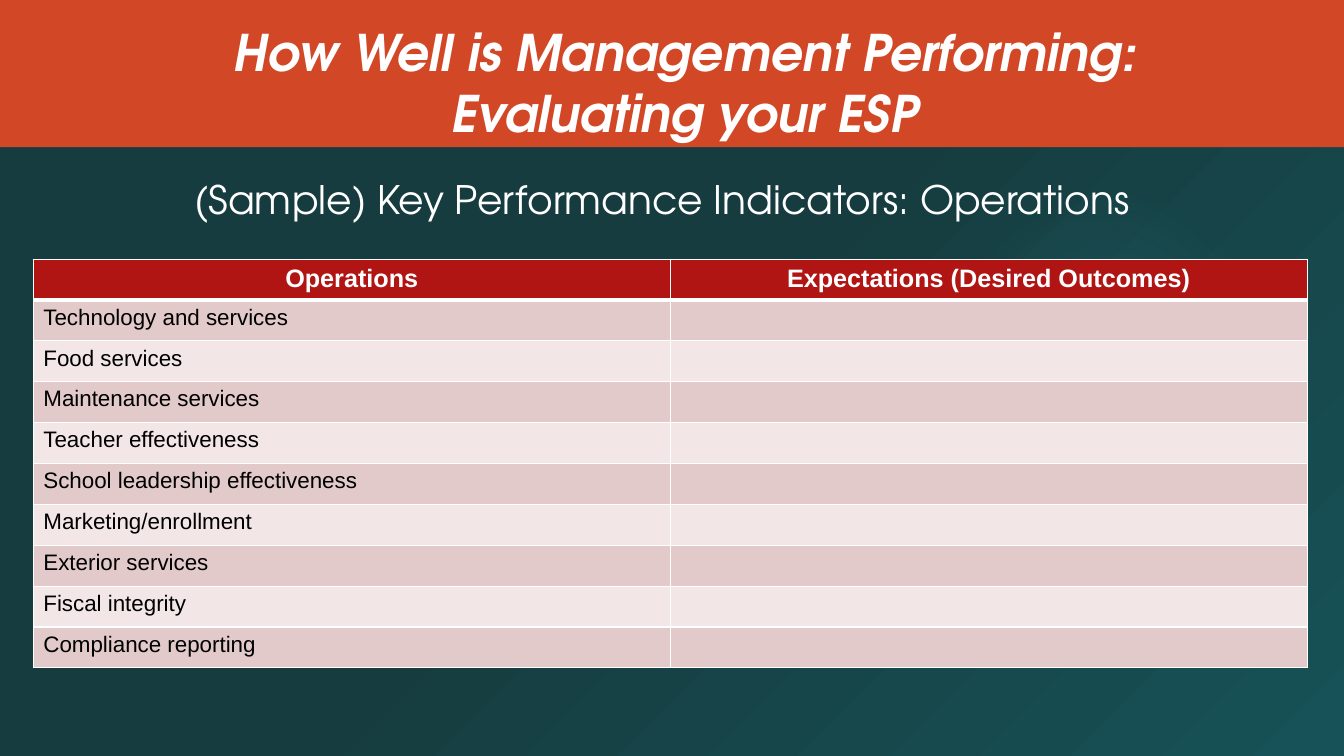
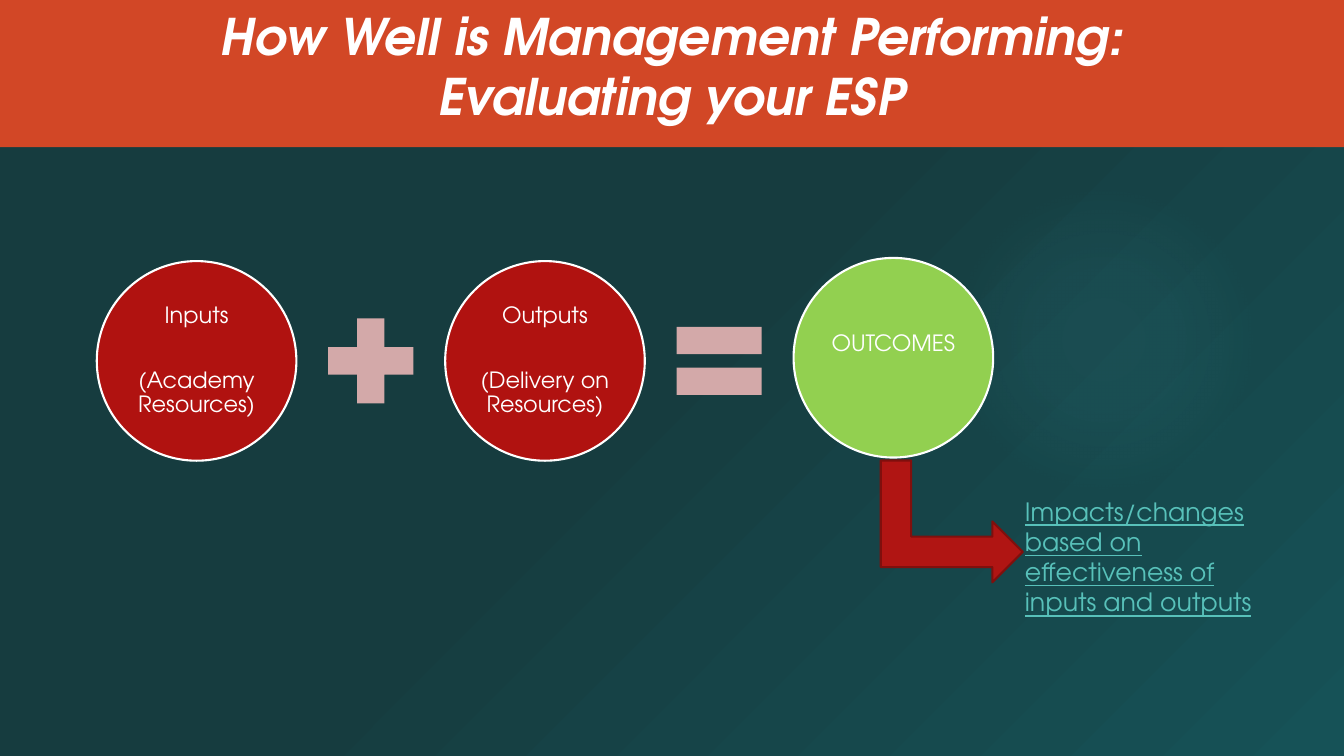
import dataclasses

import lxml.etree
import pptx
import pptx.dml.color
import pptx.enum.shapes
import pptx.enum.text
import pptx.oxml
import pptx.oxml.ns
import pptx.util

Cm = pptx.util.Cm
Pt = pptx.util.Pt
SHAPE = pptx.enum.shapes.MSO_SHAPE
ALIGN = pptx.enum.text.PP_ALIGN
qn = pptx.oxml.ns.qn


@dataclasses.dataclass(frozen=True)
class Theme:
    wide: float = 33.87
    high: float = 19.05
    font: str = "TeX Gyre Adventor"
    grid_font: str = "Arial"
    white: str = "FFFFFF"
    black: str = "000000"
    dark: str = "163C3F"
    teal: str = "165257"
    glow: str = "4CB9C3"
    band: str = "D24726"
    red: str = "B01513"
    disc: str = "B01210"
    edge: str = "800F0D"
    green: str = "92D050"
    pink: str = "D3A9A9"
    link: str = "58C1BA"
    rows: tuple = ("E3CACA", "F2E7E6")
    title: int = 36
    lead: int = 28
    head: int = 18
    note: int = 18
    body: int = 16


THEME = Theme()
TITLE = "How Well is Management Performing: Evaluating your ESP"
SERVICES = (
    "Technology and services",
    "Food services",
    "Maintenance services",
    "Teacher effectiveness",
    "School leadership effectiveness",
    "Marketing/enrollment",
    "Exterior services",
    "Fiscal integrity",
    "Compliance reporting",
)


def rgb(code):
    return pptx.dml.color.RGBColor.from_string(code)


def write(frame, words, size=THEME.body, color=THEME.white, font=THEME.font,
          align=ALIGN.LEFT, bold=False, slant=False, under=False,
          lines=None, gap=0):
    """Fill a text frame, one paragraph per line of words, with gap points between."""
    frame.word_wrap = True
    for i, line in enumerate(words.split("\n")):
        para = frame.paragraphs[0] if i == 0 else frame.add_paragraph()
        para.alignment = align
        if lines:
            para.line_spacing = lines
        if i and gap:
            para.space_before = Pt(gap)
        run = para.add_run()
        run.text = line
        face = run.font
        face.name, face.size = font, Pt(size)
        face.bold, face.italic, face.underline = bold, slant, under
        face.color.rgb = rgb(color)


def add_text(slide, box, words, **form):
    frame = slide.shapes.add_textbox(*map(Cm, box)).text_frame
    write(frame, words, **form)


def add_form(slide, kind, box, fill, line=None):
    form = slide.shapes.add_shape(kind, *map(Cm, box))
    form.shadow.inherit = False
    form.fill.solid()
    form.fill.fore_color.rgb = rgb(fill)
    if line:
        form.line.color.rgb = rgb(line)
        form.line.width = Pt(1.5)
    else:
        form.line.fill.background()
    return form


def blend(root, stops, focus):
    """Swap the first solid fill under root for a round gradient.

    Stops are (place, color, alpha) in percent; focus gives the four edges.
    """
    grad = lxml.etree.Element(qn("a:gradFill"), rotWithShape="1")
    marks = lxml.etree.SubElement(grad, qn("a:gsLst"))
    for place, color, alpha in stops:
        mark = lxml.etree.SubElement(marks, qn("a:gs"), pos=str(place * 1000))
        tint = lxml.etree.SubElement(mark, qn("a:srgbClr"), val=color)
        if alpha < 100:
            lxml.etree.SubElement(tint, qn("a:alpha"), val=str(alpha * 1000))
    way = lxml.etree.SubElement(grad, qn("a:path"), {"path": "circle"})
    edges = {side: str(part * 1000) for side, part in zip("ltrb", focus)}
    lxml.etree.SubElement(way, qn("a:fillToRect"), edges)
    old = root.find(".//" + qn("a:solidFill"))
    old.getparent().replace(old, grad)


def paint_back(master):
    master.background.fill.solid()
    stops = ((0, THEME.dark, 100), (48, THEME.dark, 100), (100, THEME.teal, 100))
    blend(master.element, stops, (0, 0, 100, 100))


def add_slide(deck, left, top):
    """Add a slide with glow, band and the title placed at left, top."""
    slide = deck.slides.add_slide(deck.slide_layouts[6])
    glow = add_form(slide, SHAPE.OVAL, (23.9, 4.65, 7.82, 7.82), THEME.glow)
    fades = ((0, 7), (36, 6), (69, 0), (100, 0))
    blend(glow.element, [(at, THEME.glow, alpha) for at, alpha in fades], (50,) * 4)
    add_form(slide, SHAPE.RECTANGLE, (0, 0, THEME.wide, 3.71), THEME.band)
    add_text(slide, (left, top, 26.14, 3.33), TITLE, size=THEME.title,
             align=ALIGN.CENTER, bold=True, slant=True)
    return slide


def rule_cell(cell, top, base):
    """Draw white borders; top and base are widths in points."""
    props = cell._tc.get_or_add_tcPr()
    for side, width in zip("LRTB", (1, 1, top, base)):
        line = lxml.etree.SubElement(props, qn("a:ln" + side), w=str(Pt(width)))
        fill = lxml.etree.SubElement(line, qn("a:solidFill"))
        lxml.etree.SubElement(fill, qn("a:srgbClr"), val=THEME.white)


def add_grid(slide, box, heads, items):
    rows = [heads] + [(item, "") for item in items]
    grid = slide.shapes.add_table(len(rows), len(heads), *map(Cm, box)).table
    grid.horz_banding = False
    for i, row in enumerate(rows):
        for j, words in enumerate(row):
            cell = grid.cell(i, j)
            rule_cell(cell, 3 if i == 1 else 1, 3 if i == 0 else 1)
            cell.fill.solid()
            shade = THEME.rows[(i - 1) % 2] if i else THEME.red
            cell.fill.fore_color.rgb = rgb(shade)
            if i == 0:
                write(cell.text_frame, words, size=THEME.head, bold=True,
                      font=THEME.grid_font, align=ALIGN.CENTER)
            elif words:
                write(cell.text_frame, words, color=THEME.black,
                      font=THEME.grid_font)


def add_disc(slide, box, words, fill, lift=0):
    """Add a circle with centred text, raised by lift."""
    disc = add_form(slide, SHAPE.OVAL, box, fill, THEME.white)
    frame = disc.text_frame
    frame.margin_left = frame.margin_right = frame.margin_top = Cm(0.05)
    frame.margin_bottom = Cm(0.05 + 2 * lift)
    frame.vertical_anchor = pptx.enum.text.MSO_ANCHOR.MIDDLE
    write(frame, words, align=ALIGN.CENTER, lines=0.9, gap=29)


def add_sum(slide):
    """Lay out inputs plus outputs equals outcomes, at an equal step."""
    left, top, size, step, sign = 2.44, 6.58, 5.03, 8.78, 2.92
    discs = (
        ("Inputs\n(Academy Resources)", THEME.disc, top, 0),
        ("Outputs\n(Delivery on Resources)", THEME.disc, top, 0),
        ("OUTCOMES", THEME.green, top - 0.08, 0.35),
    )
    for i, (words, fill, high, lift) in enumerate(discs):
        add_disc(slide, (left + i * step, high, size, size), words, fill, lift)
    inset = (size - sign) / 2
    for i, kind in enumerate((SHAPE.MATH_PLUS, SHAPE.MATH_EQUAL)):
        spot = left + (i + 0.5) * step + inset
        add_form(slide, kind, (spot, top + inset, sign, sign), THEME.pink)


def main():
    deck = pptx.Presentation()
    deck.slide_width, deck.slide_height = Cm(THEME.wide), Cm(THEME.high)
    paint_back(deck.slide_master)

    slide = add_slide(deck, 4.19, 0.41)
    add_text(slide, (3.56, 4.29, 26.24, 2.64),
             "(Sample) Key Performance Indicators: Operations",
             size=THEME.lead, align=ALIGN.CENTER)
    add_grid(slide, (0.84, 6.53, 32.1, 10.3),
             ("Operations", "Expectations (Desired Outcomes)"), SERVICES)

    slide = add_slide(deck, 3.86, 0)
    add_sum(slide)
    arrow = add_form(slide, SHAPE.BENT_UP_ARROW, (22.45, 11.35, 3.07, 3.58),
                     THEME.red, THEME.edge)
    arrow.rotation = 90
    add_text(slide, (25.58, 12.37, 6.6, 3.33),
             "Impacts/changes based on effectiveness of inputs and outputs",
             size=THEME.note, color=THEME.link, under=True)

    deck.save("out.pptx")


if __name__ == "__main__":
    main()
